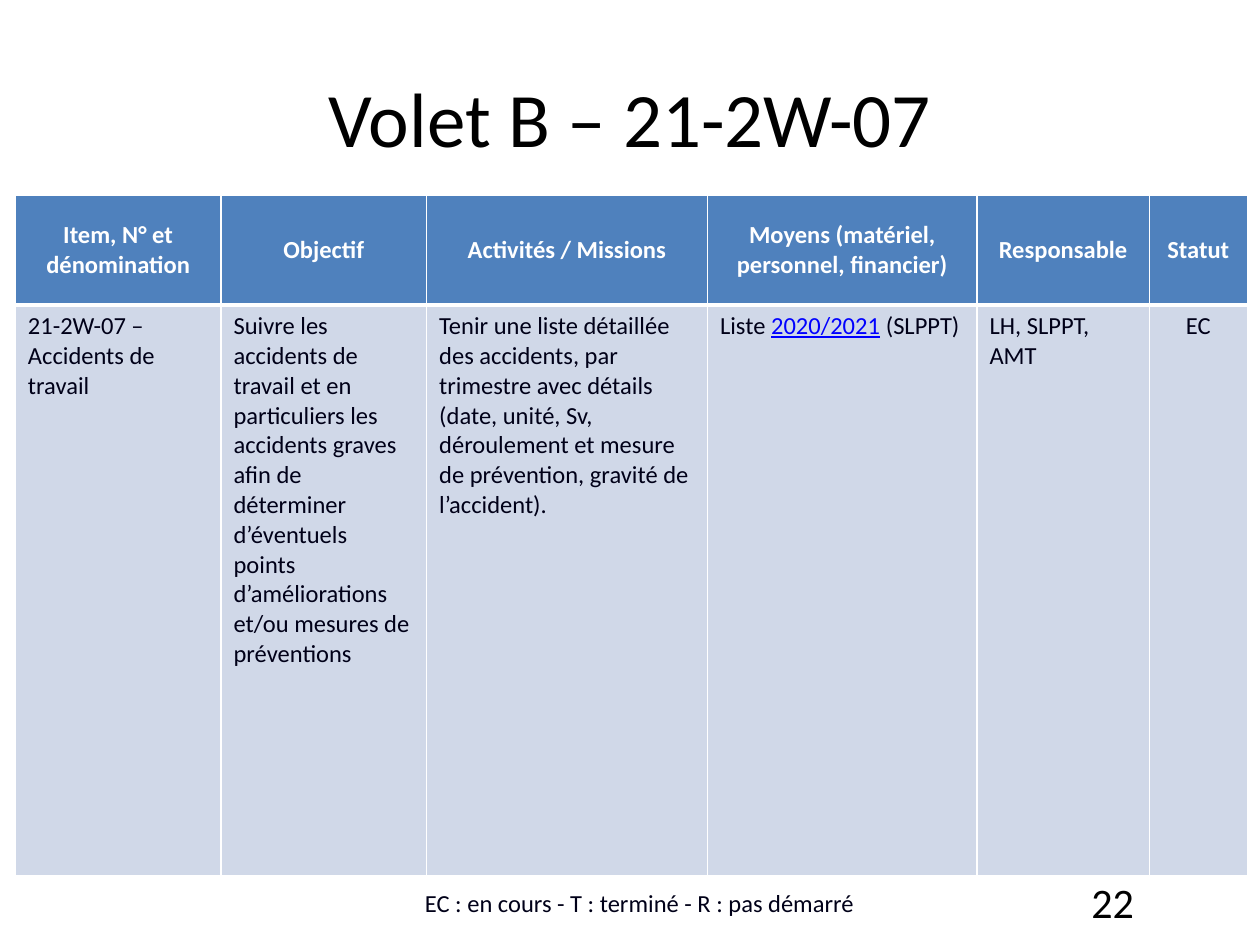
from dataclasses import dataclass

from lxml import etree
from pptx import Presentation
from pptx.dml.color import RGBColor
from pptx.enum import text
from pptx.oxml import ns
from pptx.util import Pt

MID, LEFT, RIGHT = text.PP_ALIGN.CENTER, text.PP_ALIGN.LEFT, text.PP_ALIGN.RIGHT
ANCHOR = text.MSO_ANCHOR


@dataclass(frozen=True)
class Theme:
    face: str = "Calibri"
    black: str = "000000"
    ink: str = "000018"
    white: str = "FFFFFF"
    head: str = "4F81BD"
    body: str = "D0D8E8"
    link: str = "0000FF"
    title: int = 44
    page: int = 24
    small: int = 14


THEME = Theme()
WIDTHS = (117.5, 117.5, 160.5, 154, 98.5, 56)
HEIGHTS = (62.5, 326)
HEADS = ("Item, N° et dénomination", "Objectif", "Activités / Missions",
         "Moyens (matériel, personnel, financier)", "Responsable", "Statut")
# Each body cell is a list of (words, is link) runs
BODY = (
    [("21-2W-07 – Accidents de travail", False)],
    [("Suivre les accidents de travail et en particuliers les accidents graves "
      "afin de déterminer d’éventuels points d’améliorations et/ou mesures de "
      "préventions", False)],
    [("Tenir une liste détaillée des accidents, par trimestre avec détails "
      "(date, unité, Sv, déroulement et mesure de prévention, gravité de "
      "l’accident).", False)],
    [("Liste ", False), ("2020/2021", True), (" (SLPPT)", False)],
    [("LH, SLPPT, AMT", False)],
    [("EC", False)],
)


def add_run(par, words, size, color, **extra):
    run = par.add_run()
    run.text = words
    style = {"name": THEME.face, "size": Pt(size), **extra}
    for key, value in style.items():
        setattr(run.font, key, value)
    run.font.color.rgb = RGBColor.from_string(color)


def add_label(slide, box, words, size, color, align, anchor):
    frame = slide.shapes.add_textbox(*map(Pt, box)).text_frame
    for key, value in {"word_wrap": True, "vertical_anchor": anchor}.items():
        setattr(frame, key, value)
    par = frame.paragraphs[0]
    par.alignment = align
    add_run(par, words, size, color)


def set_edges(cell, **edges):
    props = cell._tc.get_or_add_tcPr()
    for side in "LRTB":
        line = etree.SubElement(props, ns.qn(f"a:ln{side}"),
                                w=str(Pt(edges.get(side, 1))))
        fill = etree.SubElement(line, ns.qn("a:solidFill"))
        etree.SubElement(fill, ns.qn("a:srgbClr"), val=THEME.white)


def fill_cell(cell, color, align, anchor, **edges):
    set_edges(cell, **edges)
    cell.fill.solid()
    cell.fill.fore_color.rgb = RGBColor.from_string(color)
    cell.vertical_anchor = anchor
    par = cell.text_frame.paragraphs[0]
    par.alignment = align
    return par


def add_grid(slide, box):
    grid = slide.shapes.add_table(2, len(WIDTHS), *map(Pt, box)).table
    for col, width in zip(grid.columns, WIDTHS):
        col.width = Pt(width)
    for row, height in zip(grid.rows, HEIGHTS):
        row.height = Pt(height)

    # Header row
    for i, words in enumerate(HEADS):
        par = fill_cell(grid.cell(0, i), THEME.head, MID, ANCHOR.MIDDLE, B=3)
        add_run(par, words, THEME.small, THEME.white, bold=True)

    # Body row, with the status centred
    for i, runs in enumerate(BODY):
        align = MID if i == len(BODY) - 1 else LEFT
        par = fill_cell(grid.cell(1, i), THEME.body, align, ANCHOR.TOP, T=3)
        for words, link in runs:
            add_run(par, words, THEME.small, THEME.link if link else THEME.ink,
                    bold=False, underline=link)


def add_foot(slide, box):
    left, top, width, height = box
    add_label(slide, (left + 349, top, width - 349, height), "22",
              THEME.page, THEME.black, RIGHT, ANCHOR.MIDDLE)
    add_label(slide, (left, top, 397, 27.5),
              "EC : en cours - T : terminé - R : pas démarré",
              THEME.small, THEME.ink, MID, ANCHOR.BOTTOM)


def main():
    deck = Presentation()
    deck.slide_width, deck.slide_height = Pt(720), Pt(540)
    slide = deck.slides.add_slide(deck.slide_layouts[6])
    # Title, table, legend and page number
    add_label(slide, (36, 21.5, 648, 90), "Volet B – 21-2W-07",
              THEME.title, THEME.black, MID, ANCHOR.MIDDLE)
    add_grid(slide, (8.8, 111.8, sum(WIDTHS), sum(HEIGHTS)))
    add_foot(slide, (167, 500.5, 488, 29))
    deck.save("out.pptx")


if __name__ == "__main__":
    main()
